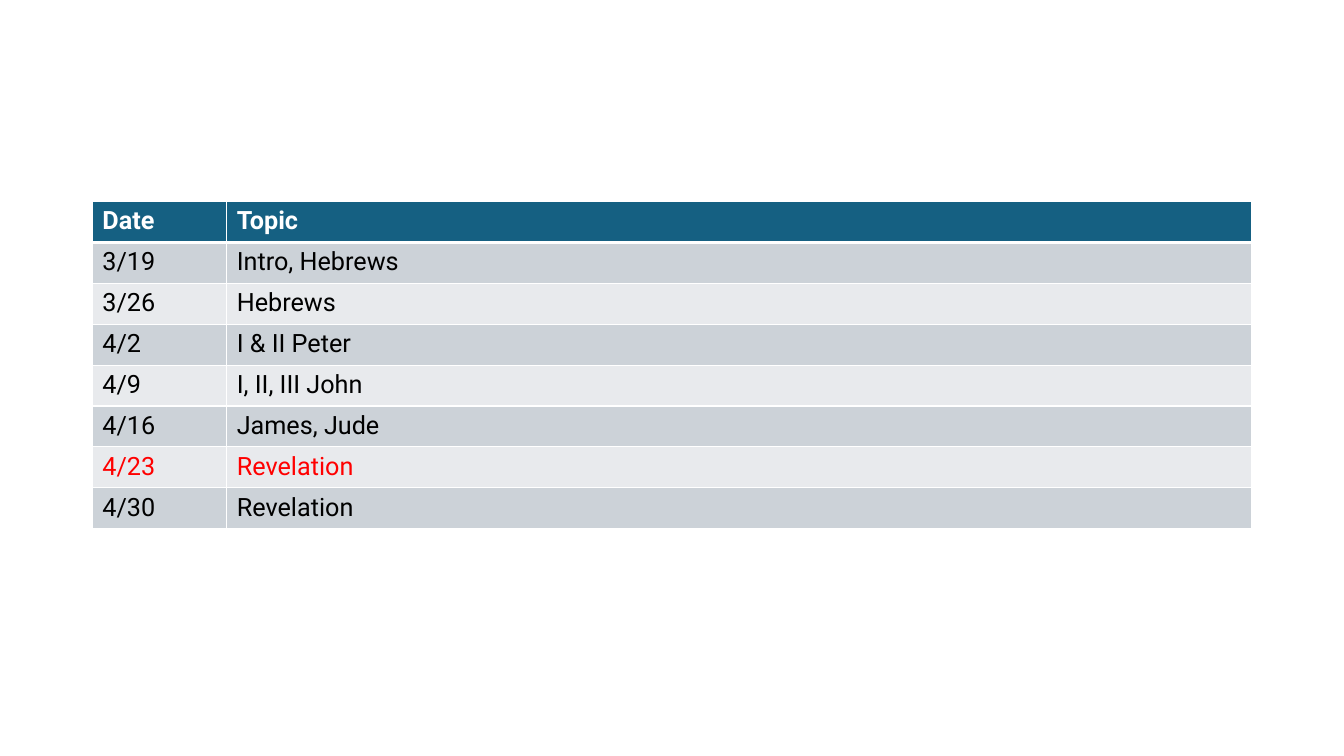
from dataclasses import dataclass
from lxml.etree import SubElement as Sub
from pptx import Presentation as Deck
from pptx.dml.color import RGBColor as Rgb
from pptx.oxml.ns import qn
from pptx.util import Pt


@dataclass(frozen=True)
class Theme:
    font: str = "Roboto"
    size: int = 18
    head: str = "156082"
    bands: tuple = ("CCD2D8", "E8EAED")
    ink: str = "000000"
    light: str = "FFFFFF"
    mark: str = "FF0000"
    thin: int = 1
    thick: int = 3


def write(frame, text, *, font, size, color, bold=False):
    run = frame.paragraphs[0].add_run()
    run.text = text
    run.font.name = font
    run.font.size = Pt(size)
    run.font.bold = bold
    run.font.color.rgb = Rgb.from_string(color)


class Painter:
    def __init__(self, slide, theme):
        self.slide = slide
        self.theme = theme

    def edge(self, cell, side, width):
        line = Sub(cell._tc.get_or_add_tcPr(), qn(f"a:ln{side}"), w=str(Pt(width)))
        fill = Sub(line, qn("a:solidFill"))
        Sub(fill, qn("a:srgbClr"), val=self.theme.light)

    def cell(self, cell, text, row, marked):
        look = self.theme
        head = row == 0
        for side in "LRTB":
            thick = (row, side) in ((0, "B"), (1, "T"))
            self.edge(cell, side, look.thick if thick else look.thin)
        cell.fill.solid()
        fill = look.head if head else look.bands[(row - 1) % 2]
        cell.fill.fore_color.rgb = Rgb.from_string(fill)
        color = look.light if head else look.mark if marked else look.ink
        write(cell.text_frame, text, font=look.font, size=look.size,
              color=color, bold=head)

    def table(self, rows, left, top, widths, height, current):
        frame = self.slide.shapes.add_table(
            len(rows), len(widths), Pt(left), Pt(top),
            Pt(sum(widths)), Pt(height * len(rows)))
        grid = frame.table
        for col, width in zip(grid.columns, widths):
            col.width = Pt(width)
        for i, texts in enumerate(rows):
            grid.rows[i].height = Pt(height)
            for j, text in enumerate(texts):
                self.cell(grid.cell(i, j), text, i, texts[0] == current)


def main():
    deck = Deck()
    deck.slide_width, deck.slide_height = Pt(960), Pt(540)
    slide = deck.slides.add_slide(deck.slide_layouts[6])
    rows = [
        ("Date", "Topic"),
        ("3/19", "Intro, Hebrews"),
        ("3/26", "Hebrews"),
        ("4/2", "I & II Peter"),
        ("4/9", "I, II, III John"),
        ("4/16", "James, Jude"),
        ("4/23", "Revelation"),
        ("4/30", "Revelation"),
    ]
    Painter(slide, Theme()).table(
        rows, left=66, top=144, widths=(96, 732), height=29.2, current="4/23")
    deck.save("out.pptx")


if __name__ == "__main__":
    main()
